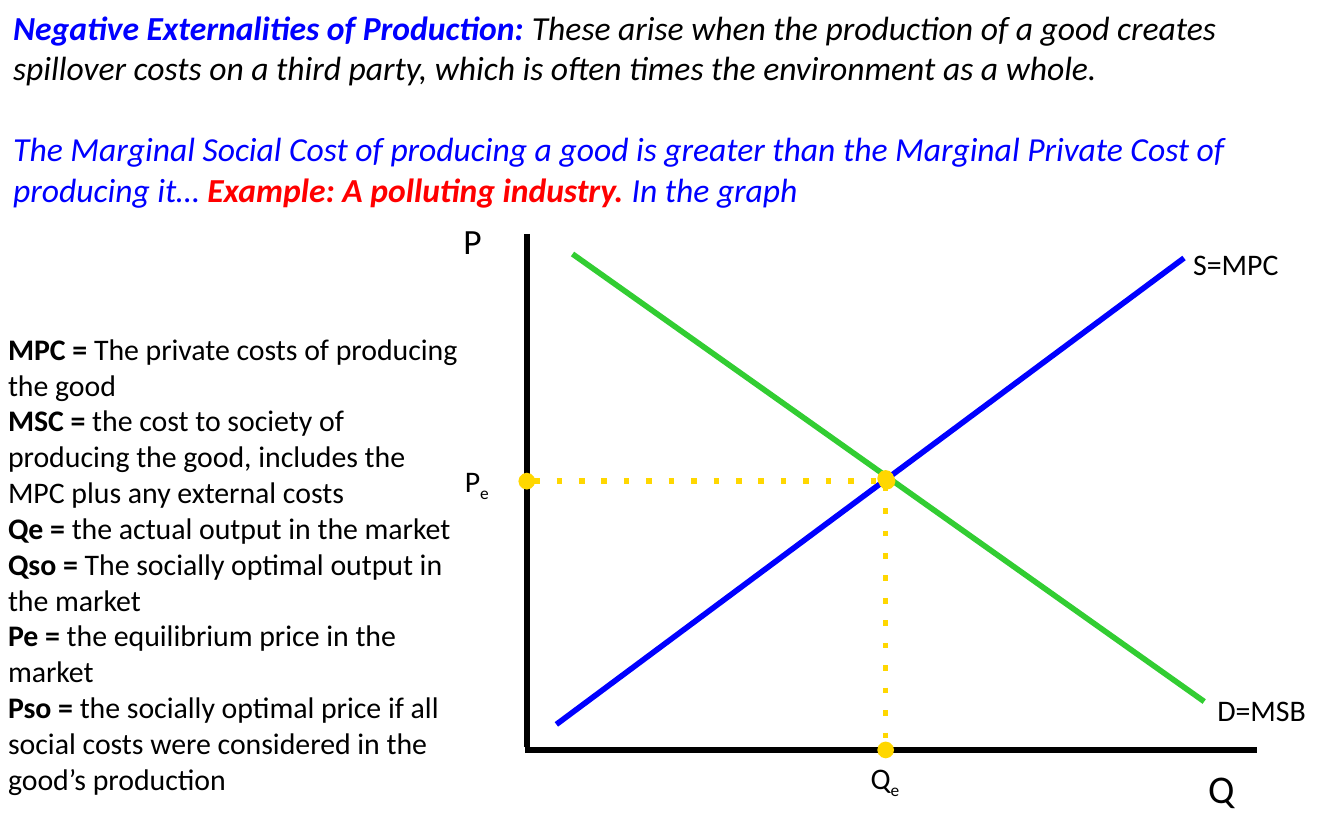
"""Build a slide on negative externalities of production with its market graph."""
from pptx import Presentation
from pptx.dml.color import RGBColor
from pptx.enum.shapes import MSO_CONNECTOR
from pptx.oxml.ns import qn
from pptx.util import Inches, Pt
from lxml import etree

STRAIGHT = MSO_CONNECTOR.STRAIGHT
BLACK, BLUE, RED = "000000", "0000FF", "FF0000"
GREEN, GOLD = "32CD32", "FFD700"


def color(value):
    """Turn a hex string into a colour."""
    return RGBColor.from_string(value)


class SlideBuilder:
    """Hold the style and the current slide, and add elements to it."""

    font = "Calibri"
    line_width = 3

    def __init__(self, slide):
        """Keep the slide to draw on."""
        self.slide = slide

    def text(self, area, paragraphs, size=16, gap=0, inset=0.1):
        """Add a text box of paragraphs, each a list of (text, format) spans."""
        box = self.slide.shapes.add_textbox(*map(Inches, area))
        frame = box.text_frame
        frame.word_wrap = True
        frame.margin_left = Inches(inset)
        for index, spans in enumerate(paragraphs):
            para = frame.add_paragraph() if index else frame.paragraphs[0]
            para.space_before = Pt(gap if index else 0)
            for words, changes in spans:
                self.span(para, words, size, **changes)

    def span(self, para, words, size, ink=BLACK, subscript=False, **changes):
        """Add one formatted run to a paragraph."""
        span = para.add_run()
        span.text = words
        values = {"name": self.font, "size": Pt(size), **changes}
        for name, value in values.items():
            setattr(span.font, name, value)
        span.font.color.rgb = color(ink)
        if subscript:
            span._r.get_or_add_rPr().set("baseline", "-25000")

    def line(self, start, end, ink=BLACK, dotted=False):
        """Add a straight line, dotted with oval ends if asked."""
        line = self.slide.shapes.add_connector(STRAIGHT, *map(Inches, start + end))
        line.line.color.rgb = color(ink)
        line.line.width = Pt(self.line_width)
        if dotted:
            outline = line.line._get_or_add_ln()
            etree.SubElement(outline, qn("a:prstDash"), val="dot")
            for tag in ("a:headEnd", "a:tailEnd"):
                etree.SubElement(outline, qn(tag), type="oval")
        etree.SubElement(line._element.spPr, qn("a:effectLst"))


def add_graph(builder):
    """Draw the axes, the curves, the equilibrium and their labels."""
    builder.line((3.92, 1.74), (3.92, 5.56))
    builder.line((3.91, 5.58), (9.35, 5.58))
    builder.line((4.26, 1.89), (8.96, 5.22), GREEN)
    builder.line((4.14, 5.39), (8.81, 1.92), BLUE)
    builder.line((3.92, 3.58), (6.6, 3.58), GOLD, dotted=True)
    builder.line((6.59, 3.56), (6.59, 5.58), GOLD, dotted=True)

    labels = [
        ("P", "", (3.35, 1.58, 0.87, 0.56), 19),
        ("Q", "", (8.89, 5.64, 0.81, 0.61), 21),
        ("D=MSB", "", (8.96, 5.1, 1.04, 0.5), 16),
        ("S=MPC", "", (8.78, 1.78, 1.22, 0.5), 16),
        ("Q", "e", (6.38, 5.6, 0.75, 0.5), 16),
        ("P", "e", (3.36, 3.39, 0.75, 0.5), 16),
    ]
    for letter, index, area, size in labels:
        spans = [(letter, {})]
        if index:
            spans.append((index, {"subscript": True}))
        builder.text(area, [spans], size)


def add_definitions(builder):
    """List the terms used in the graph."""
    definitions = {
        "MPC": "The private costs of producing the good",
        "MSC": "the cost to society of producing the good, includes the MPC plus any external costs",
        "Qe": "the actual output in the market",
        "Qso": "The socially optimal output in the market",
        "Pe": "the equilibrium price in the market",
        "Pso": "the socially optimal price if all social costs were considered in the good’s production",
    }
    paragraphs = [
        [(f"{term} = ", {"bold": True}), (meaning, {})]
        for term, meaning in definitions.items()
    ]
    builder.text((0, 2.41, 3.55, 3.6), paragraphs, inset=0.06)


def add_introduction(builder):
    """Write the definition and the example above the graph."""
    paragraphs = [
        [
            ("Negative Externalities of Production: ", {"ink": BLUE, "bold": True, "italic": True}),
            ("These arise when the production of a good creates spillover costs on a third party, "
             "which is often times the environment as a whole.", {"italic": True}),
        ],
        [
            ("The Marginal Social Cost of producing a good is greater than the Marginal Private "
             "Cost of producing it… ", {"ink": BLUE, "italic": True}),
            ("Example: A polluting industry. ", {"ink": RED, "bold": True, "italic": True}),
            ("In the graph", {"ink": BLUE, "italic": True}),
        ],
    ]
    builder.text((0, 0, 10, 1.62), paragraphs, size=18, gap=22)


def main():
    """Build and save the deck."""
    deck = Presentation()
    deck.slide_width, deck.slide_height = Inches(10), Inches(6.25)
    page = deck.slides.add_slide(deck.slide_layouts[6])
    builder = SlideBuilder(page)
    add_graph(builder)
    add_definitions(builder)
    add_introduction(builder)
    deck.save("out.pptx")


if __name__ == "__main__":
    main()
